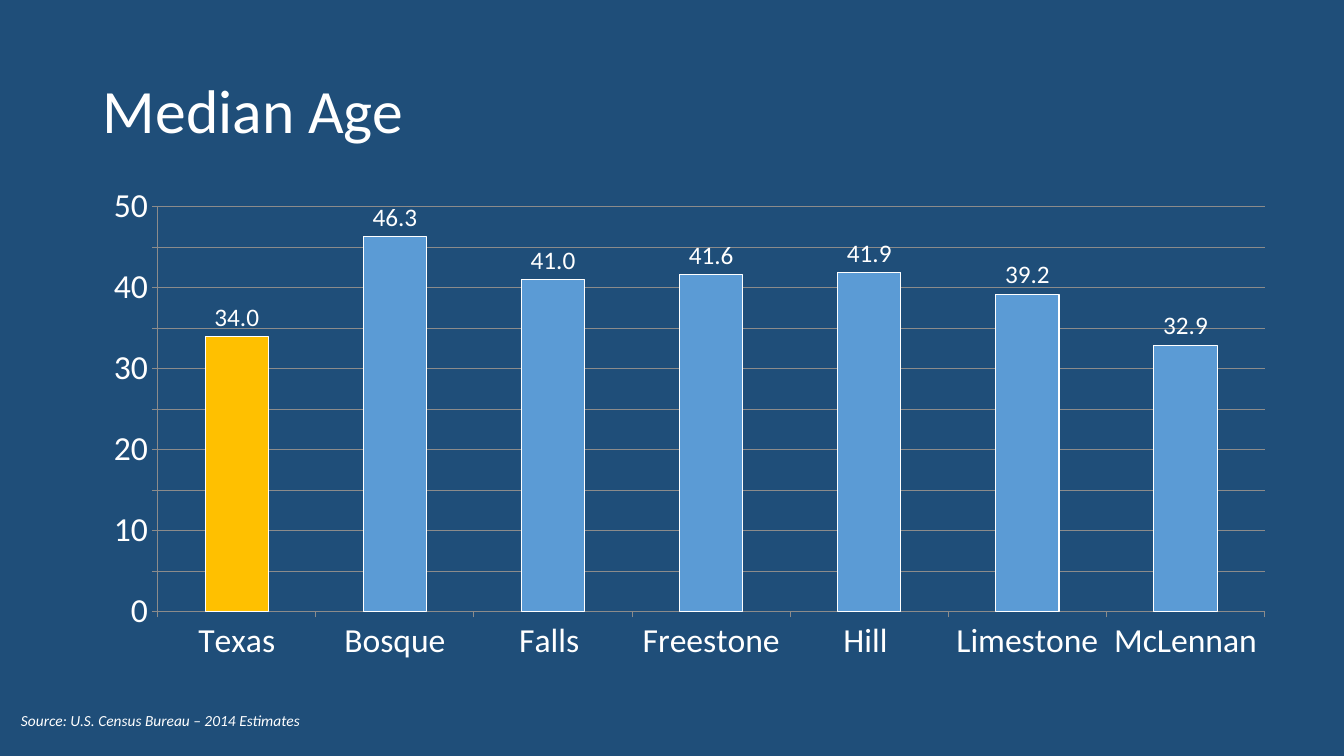
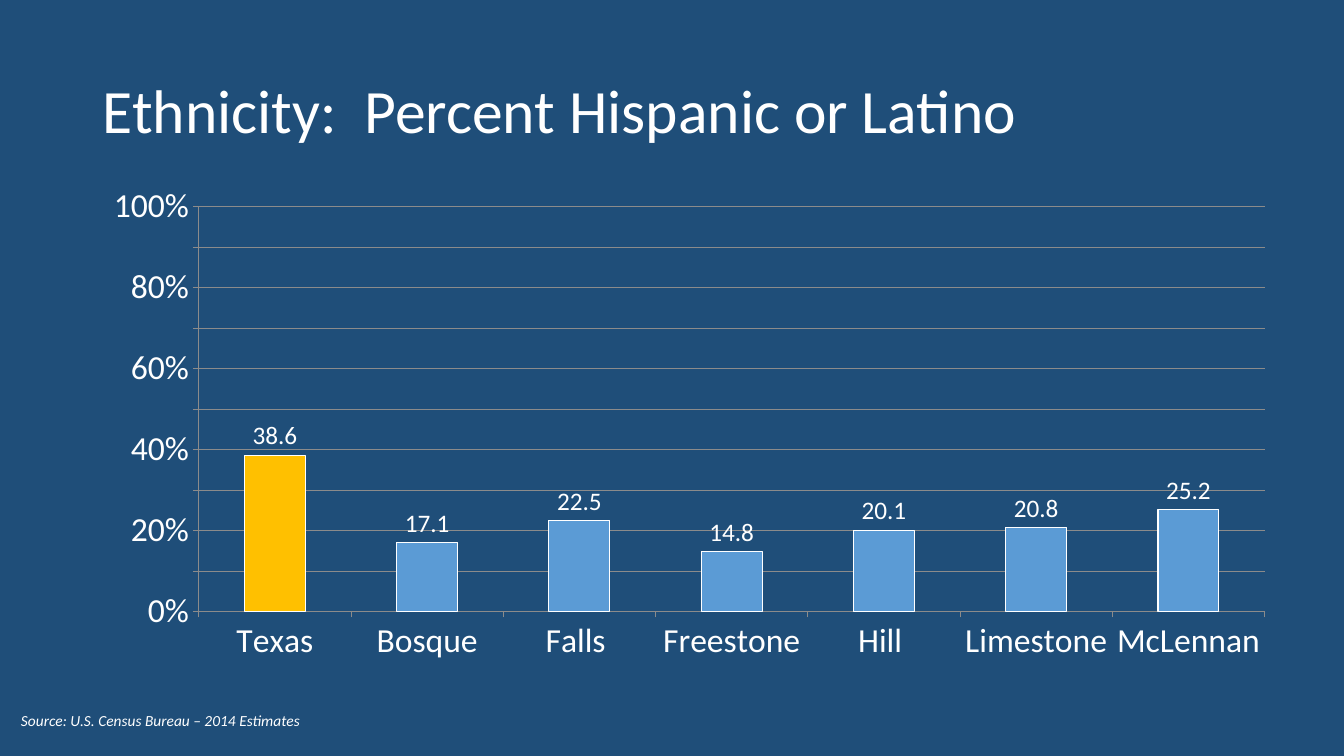
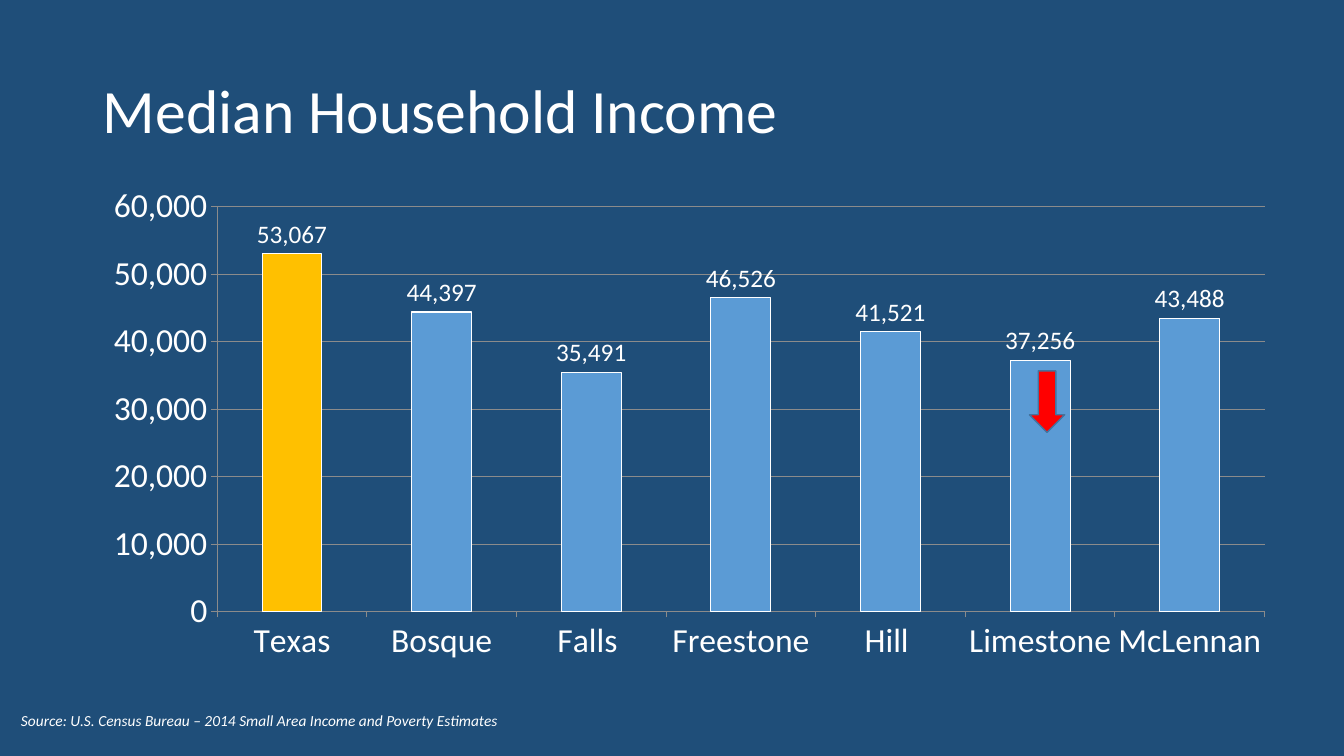
from dataclasses import dataclass

from pptx import Presentation
from pptx.chart.data import CategoryChartData
from pptx.dml.color import RGBColor
from pptx.enum.chart import XL_CHART_TYPE, XL_LABEL_POSITION, XL_TICK_MARK
from pptx.enum.shapes import MSO_SHAPE
from pptx.enum.text import MSO_ANCHOR, MSO_AUTO_SIZE, PP_ALIGN
from pptx.util import Inches, Pt

COLUMN_CLUSTERED = XL_CHART_TYPE.COLUMN_CLUSTERED
OUTSIDE_END = XL_LABEL_POSITION.OUTSIDE_END
TICK_OUTSIDE = XL_TICK_MARK.OUTSIDE
DOWN_ARROW = MSO_SHAPE.DOWN_ARROW
MIDDLE = MSO_ANCHOR.MIDDLE
FIT_SHAPE = MSO_AUTO_SIZE.SHAPE_TO_FIT_TEXT
LEFT = PP_ALIGN.LEFT
TITLE_ONLY = 5


@dataclass(frozen=True)
class Theme:
    font: str = "Calibri"
    background: RGBColor = RGBColor(0x1F, 0x4E, 0x79)
    text: RGBColor = RGBColor(0xFF, 0xFF, 0xFF)
    county: RGBColor = RGBColor(0x5B, 0x9B, 0xD5)
    state: RGBColor = RGBColor(0xFF, 0xC0, 0x00)
    grid: RGBColor = RGBColor(0x8B, 0x8B, 0x8B)
    arrow: RGBColor = RGBColor(0xFF, 0x00, 0x00)
    arrow_line: RGBColor = RGBColor(0x43, 0x73, 0x9E)
    title_size: int = 44
    axis_size: int = 24
    label_size: int = 18
    source_size: int = 11
    thin_line: float = 0.75
    arrow_line_width: float = 1


THEME = Theme()
TITLE_BOX = (0.92, 0.4, 11.5, 1.45)
CHART_BOX = (0.89, 1.75, 11.89, 4.92)
ARROW_BOX = (10.21, 3.68, 0.35, 0.61)
AREAS = ("Texas", "Bosque", "Falls ", "Freestone", "Hill ", "Limestone", "McLennan")
ESTIMATES = "Source: U.S. Census Bureau – 2014 Estimates"
INCOME_ESTIMATES = "Source: U.S. Census Bureau – 2014 Small Area Income and Poverty Estimates"

SLIDES = (
    {
        "title": "Median Age",
        "values": (34, 46.3, 41, 41.6, 41.9, 39.2, 32.9),
        "maximum": 50, "step": 5,
        "axis_format": "General", "label_format": "#,##0.0",
        "source": ESTIMATES, "source_width": 3,
    },
    {
        "title": "Ethnicity:  Percent Hispanic or Latino",
        "values": (38.6, 17.1, 22.5, 14.8, 20.1, 20.8, 25.2),
        "maximum": 100, "step": 10,
        "axis_format": "0\\%", "label_format": "0.0",
        "source": ESTIMATES, "source_width": 3,
    },
    {
        "title": "Median Household Income",
        "values": (53067, 44397, 35491, 46526, 41521, 37256, 43488),
        "maximum": 60000, "step": 10000,
        "axis_format": "#,##0", "label_format": "#,##0",
        "source": INCOME_ESTIMATES, "source_width": 4.97,
        "arrow_box": ARROW_BOX,
    },
)


def inches(box):
    return [Inches(length) for length in box]


def set_attributes(target, values):
    for name, value in values.items():
        setattr(target, name, value)


def format_font(font, size, **extra):
    set_attributes(font, {"name": THEME.font, "size": Pt(size), **extra})
    font.color.rgb = THEME.text


def format_line(line, color, width):
    line.color.rgb = color
    line.width = Pt(width)


def prepare_layout(presentation):
    """Set the background and title position that all slides inherit."""
    fill = presentation.slide_master.background.fill
    fill.solid()
    fill.fore_color.rgb = THEME.background
    layout = presentation.slide_layouts[TITLE_ONLY]
    names = ("left", "top", "width", "height")
    set_attributes(layout.placeholders[0], dict(zip(names, inches(TITLE_BOX))))
    return layout


def fill_title(slide, text):
    frame = slide.shapes.title.text_frame
    frame.text = text
    frame.vertical_anchor = MIDDLE
    paragraph = frame.paragraphs[0]
    set_attributes(paragraph, {"alignment": LEFT, "line_spacing": 0.9})
    format_font(paragraph.runs[0].font, THEME.title_size)


def format_axis(axis, number_format):
    axis.major_tick_mark = TICK_OUTSIDE
    format_font(axis.tick_labels.font, THEME.axis_size)
    set_attributes(axis.tick_labels, {"number_format": number_format,
                                      "number_format_is_linked": False})
    format_line(axis.format.line, THEME.grid, THEME.thin_line)


def format_columns(plot, label_format):
    """Colour the county columns, with the state in front set apart."""
    set_attributes(plot, {"gap_width": 150, "vary_by_categories": False,
                          "has_data_labels": True})
    series = plot.series[0]
    for item, color in ((series, THEME.county), (series.points[0], THEME.state)):
        item.format.fill.solid()
        item.format.fill.fore_color.rgb = color
        format_line(item.format.line, THEME.text, THEME.thin_line)
    set_attributes(plot.data_labels, {
        "show_value": True,
        "position": OUTSIDE_END,
        "number_format": label_format,
        "number_format_is_linked": False,
    })
    format_font(plot.data_labels.font, THEME.label_size)


def add_area_chart(slide, box, content):
    """Add a column chart that compares the state with its counties."""
    data = CategoryChartData()
    data.categories = AREAS
    data.add_series("Series 1", content["values"])
    chart = slide.shapes.add_chart(COLUMN_CLUSTERED, *inches(box), data).chart
    set_attributes(chart, {"has_legend": False, "has_title": False})
    format_font(chart.font, THEME.label_size)
    format_axis(chart.category_axis, "General")
    value_axis = chart.value_axis
    format_axis(value_axis, content["axis_format"])
    set_attributes(value_axis, {
        "minimum_scale": 0,
        "maximum_scale": content["maximum"],
        "major_unit": content["step"],
        "has_major_gridlines": True,
    })
    format_line(value_axis.major_gridlines.format.line, THEME.grid, THEME.thin_line)
    format_columns(chart.plots[0], content["label_format"])


def add_source(slide, box, text):
    frame = slide.shapes.add_textbox(*inches(box)).text_frame
    set_attributes(frame, {"text": text, "word_wrap": False, "auto_size": FIT_SHAPE})
    format_font(frame.paragraphs[0].runs[0].font, THEME.source_size, italic=True)


def add_down_arrow(slide, box):
    arrow = slide.shapes.add_shape(DOWN_ARROW, *inches(box))
    arrow.shadow.inherit = False
    arrow.fill.solid()
    arrow.fill.fore_color.rgb = THEME.arrow
    format_line(arrow.line, THEME.arrow_line, THEME.arrow_line_width)


def add_chart_slide(presentation, layout, content):
    slide = presentation.slides.add_slide(layout)
    fill_title(slide, content["title"])
    add_area_chart(slide, CHART_BOX, content)
    add_source(slide, (0.11, 7.01, content["source_width"], 0.29), content["source"])
    if "arrow_box" in content:
        add_down_arrow(slide, content["arrow_box"])


def main():
    presentation = Presentation()
    set_attributes(presentation, {"slide_width": Inches(13.33),
                                  "slide_height": Inches(7.5)})
    layout = prepare_layout(presentation)
    for content in SLIDES:
        add_chart_slide(presentation, layout, content)
    presentation.save("out.pptx")


if __name__ == "__main__":
    main()
